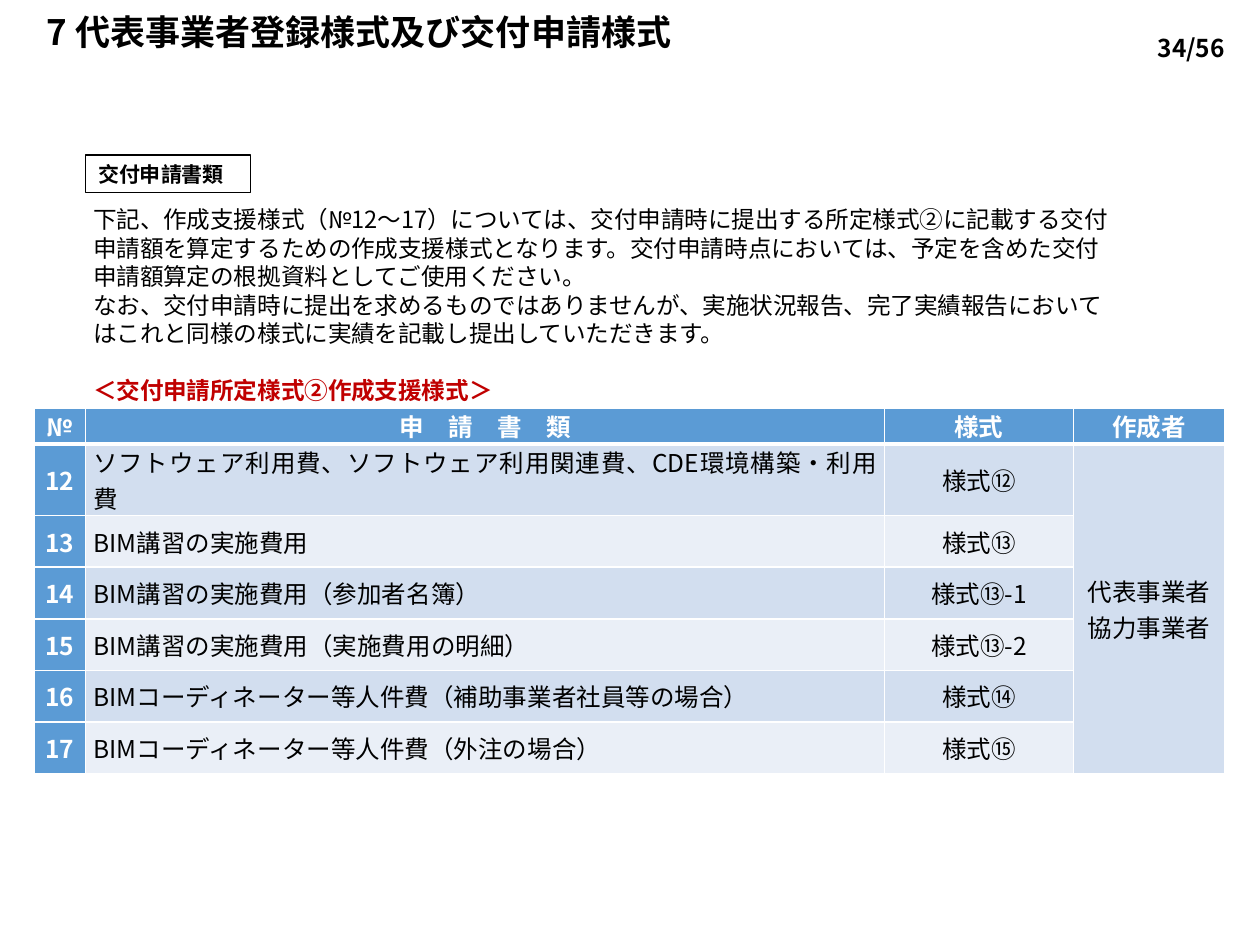
import pptx
import pptx.util
import pptx.dml.color
import pptx.enum.shapes
import pptx.enum.text
import pptx.oxml.ns
import lxml.etree

Pt = pptx.util.Pt
ALIGN = pptx.enum.text.PP_ALIGN
MIDDLE = pptx.enum.text.MSO_ANCHOR.MIDDLE
FONT = "Noto Sans CJK JP"
BLACK, WHITE, RED, BLUE = "000000", "FFFFFF", "C00000", "5B9BD5"
BANDS = ("D2DEEF", "EAEFF7")

COLS, ROWS = 100, 75  # slide grid
WIDTH, HEIGHT = pptx.util.Inches(10), pptx.util.Inches(7.5)

HEADS = ("№", "申　請　書　類", "様式", "作成者")
FORMS = (
    ("ソフトウェア利用費、ソフトウェア利用関連費、CDE環境構築・利用費", "様式⑫"),
    ("BIM講習の実施費用", "様式⑬"),
    ("BIM講習の実施費用（参加者名簿）", "様式⑬-1"),
    ("BIM講習の実施費用（実施費用の明細）", "様式⑬-2"),
    ("BIMコーディネーター等人件費（補助事業者社員等の場合）", "様式⑭"),
    ("BIMコーディネーター等人件費（外注の場合）", "様式⑮"),
)
MAKERS = ("代表事業者", "協力事業者")
NOTES = (
    "下記、作成支援様式（№12～17）については、交付申請時に提出する所定様式②に記載する"
    "交付申請額を算定するための作成支援様式となります。交付申請時点においては、"
    "予定を含めた交付申請額算定の根拠資料としてご使用ください。",
    "なお、交付申請時に提出を求めるものではありませんが、実施状況報告、完了実績報告に"
    "おいてはこれと同様の様式に実績を記載し提出していただきます。",
)


def across(cols):
    return int(WIDTH * cols / COLS)


def down(rows):
    return int(HEIGHT * rows / ROWS)


def place(left, top, width, height):
    return across(left), down(top), across(width), down(height)


def color(code):
    return pptx.dml.color.RGBColor.from_string(code)


def write(para, text, size, code=BLACK, bold=False, align=ALIGN.LEFT, lead=None):
    para.alignment = align
    if lead:
        para.line_spacing = lead
    run = para.add_run()
    run.text = text
    font = run.font
    font.name, font.size, font.bold = FONT, Pt(size), bold
    font.color.rgb = color(code)
    east = lxml.etree.SubElement(run._r.get_or_add_rPr(), pptx.oxml.ns.qn("a:ea"))
    east.set("typeface", FONT)


def rule(cell, foot):
    """Draw white cell borders; foot is the weight of the bottom one."""
    props = cell._tc.get_or_add_tcPr()
    for side, weight in (("L", 1), ("R", 1), ("T", 1), ("B", foot)):
        line = lxml.etree.SubElement(props, pptx.oxml.ns.qn("a:ln" + side))
        line.set("w", str(Pt(weight)))
        fill = lxml.etree.SubElement(line, pptx.oxml.ns.qn("a:solidFill"))
        lxml.etree.SubElement(fill, pptx.oxml.ns.qn("a:srgbClr")).set("val", WHITE)


def fill_cell(cell, lines, back, head=False, align=ALIGN.CENTER, foot=1):
    rule(cell, foot)
    cell.fill.solid()
    cell.fill.fore_color.rgb = color(back)
    cell.vertical_anchor = MIDDLE
    cell.margin_left = cell.margin_right = across(0.6)
    cell.margin_top = cell.margin_bottom = 0
    frame = cell.text_frame
    for i, line in enumerate(lines):
        para = frame.add_paragraph() if i else frame.paragraphs[0]
        write(para, line, 14, WHITE if head else BLACK, head, align)


def add_title(slide, box):
    title = slide.shapes.title
    title.left, title.top, title.width, title.height = box
    frame = title.text_frame
    frame.vertical_anchor = MIDDLE
    write(frame.paragraphs[0], "7 代表事業者登録様式及び交付申請様式", 20,
          bold=True, lead=0.9)


def add_page(slide, box):
    frame = slide.shapes.add_textbox(*box).text_frame
    frame.word_wrap = True
    frame.vertical_anchor = MIDDLE
    write(frame.paragraphs[0], "34/56", 14, bold=True, align=ALIGN.CENTER, lead=Pt(40))


def add_label(slide, box):
    shape = slide.shapes.add_shape(pptx.enum.shapes.MSO_SHAPE.RECTANGLE, *box)
    shape.shadow.inherit = False
    shape.fill.background()
    shape.line.color.rgb = color(BLACK)
    shape.line.width = Pt(0.75)
    frame = shape.text_frame
    frame.word_wrap = True
    frame.vertical_anchor = MIDDLE
    write(frame.paragraphs[0], "交付申請書類", 12, bold=True)


def add_notes(slide, box):
    frame = slide.shapes.add_textbox(*box).text_frame
    frame.word_wrap = True
    lead = Pt(16.2)
    for i, note in enumerate(NOTES):
        para = frame.add_paragraph() if i else frame.paragraphs[0]
        write(para, note, 13.5, lead=lead)
    para = frame.add_paragraph()
    para.space_before = lead
    write(para, "＜交付申請所定様式②作成支援様式＞", 13.5, RED, True, lead=lead)


def add_forms(slide, box):
    table = slide.shapes.add_table(len(FORMS) + 1, len(HEADS), *box).table
    for col, width in zip(table.columns, (4.1, 63.4, 15, 12)):
        col.width = across(width)
    for i, row in enumerate(table.rows):
        row.height = down(4.1 if i else 2.2)
    for i, head in enumerate(HEADS):
        fill_cell(table.cell(0, i), [head], BLUE, True, foot=3)
    for i, (name, form) in enumerate(FORMS, 1):
        back = BANDS[(i - 1) % 2]
        fill_cell(table.cell(i, 0), [str(11 + i)], BLUE, True)
        fill_cell(table.cell(i, 1), [name], back, align=ALIGN.JUSTIFY)
        fill_cell(table.cell(i, 2), [form], back)
    maker = table.cell(1, 3)
    maker.merge(table.cell(len(FORMS), 3))
    fill_cell(maker, MAKERS, BANDS[0])


def main():
    deck = pptx.Presentation()
    deck.slide_width, deck.slide_height = WIDTH, HEIGHT
    slide = deck.slides.add_slide(deck.slide_layouts[5])
    add_forms(slide, place(2.7, 32.4, 94.5, 26.8))
    add_notes(slide, place(6.4, 15.8, 83.7, 16.9))
    add_label(slide, place(6.8, 12.3, 13.1, 3))
    add_title(slide, place(2.7, 0, 81.2, 5.4))
    add_page(slide, place(89.1, 0, 10.9, 4.3))
    deck.save("out.pptx")


if __name__ == "__main__":
    main()
